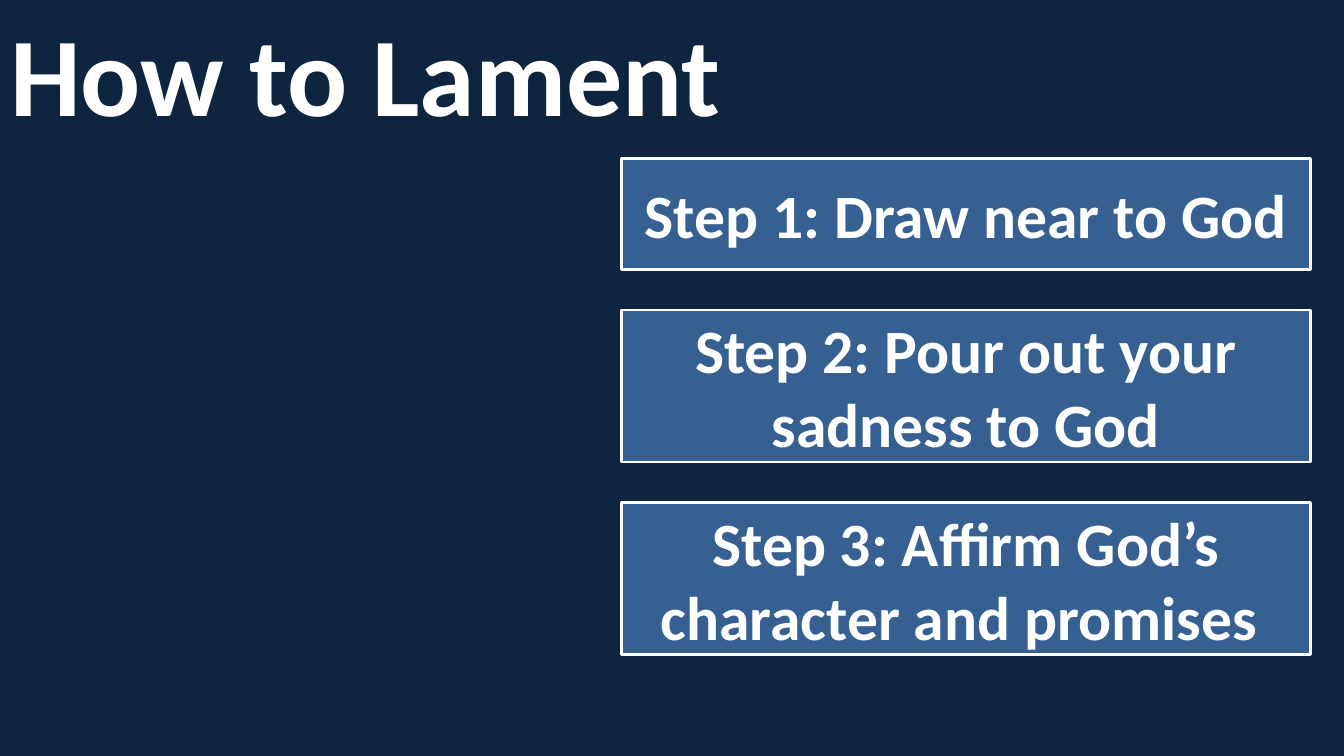
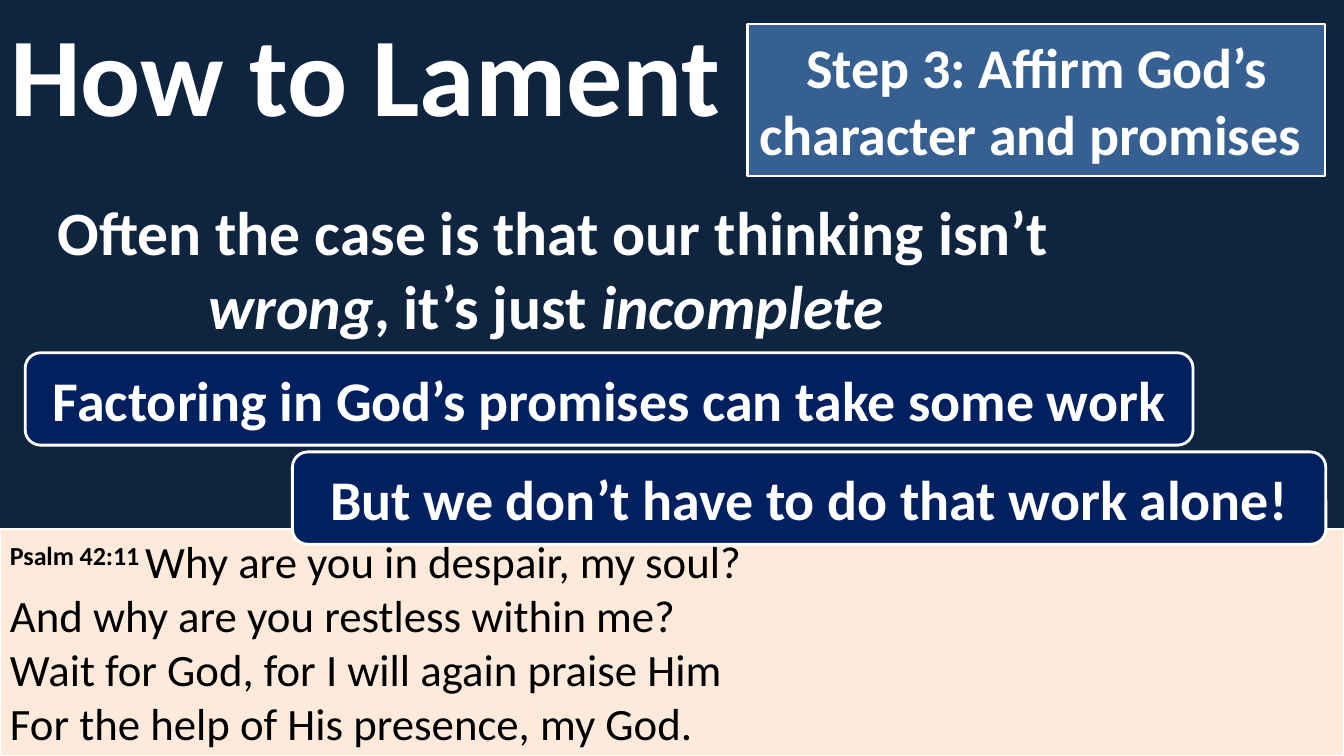
"""Build two slides on how to lament."""
from dataclasses import dataclass

from pptx import Presentation
from pptx.dml.color import RGBColor as Rgb
from pptx.enum.shapes import MSO_SHAPE as Form
from pptx.enum.text import MSO_ANCHOR as Anchor, MSO_AUTO_SIZE as Fit, PP_ALIGN as Align
from pptx.util import Inches, Pt


@dataclass(frozen=True)
class Theme:
    """Colours, type sizes and font of the deck."""
    font: str = "Calibri"
    night: str = "0F243E"
    steel: str = "376092"
    navy: str = "002060"
    cream: str = "FDEADA"
    white: str = "FFFFFF"
    black: str = "000000"
    head: int = 80
    large: int = 44
    mid: int = 40
    verse: int = 32


class Deck:
    """Hold the theme and the current slide, on a grid of 160 by 90."""

    def __init__(self, theme):
        """Open a wide deck with a dark master."""
        self.theme = theme
        self.prs = Presentation()
        self.prs.slide_width, self.prs.slide_height = Inches(13.33), Inches(7.5)
        fill = self.prs.slide_master.background.fill
        fill.solid()
        fill.fore_color.rgb = Rgb.from_string(theme.night)

    def area(self, col, row, wide, high):
        """Turn grid cells into lengths."""
        unit = self.prs.slide_height / 90
        return [round(n * unit) for n in (col, row, wide, high)]

    def label(self, shape, runs, size, ink=None, align=Align.CENTER, anchor=Anchor.MIDDLE):
        """Fill a shape with runs given as pairs of text and marks: b, i or s."""
        frame = shape.text_frame
        frame.word_wrap = True
        frame.auto_size = Fit.NONE
        frame.vertical_anchor = anchor
        para = frame.paragraphs[0]
        para.alignment = align
        for text, marks in runs:
            for num, line in enumerate(text.split("\n")):
                if num:
                    para.add_line_break()
                run = para.add_run()
                run.text = line
                font = run.font
                font.name, font.size = self.theme.font, Pt(size)
                font.bold, font.italic = "b" in marks, "i" in marks
                font.color.rgb = Rgb.from_string(ink or self.theme.white)
                if "s" in marks:
                    run._r.get_or_add_rPr().set("baseline", "30000")

    def page(self, title):
        """Add a slide with its title."""
        self.slide = self.prs.slides.add_slide(self.prs.slide_layouts[5])
        shape = self.slide.shapes.title
        shape.left, shape.top, shape.width, shape.height = self.area(0, 1, 92, 15)
        self.label(shape, [(title, "b")], self.theme.head, align=Align.LEFT)

    def note(self, cells, runs, size):
        """Add plain text."""
        self.label(self.slide.shapes.add_textbox(*self.area(*cells)), runs, size)

    def box(self, cells, fill, runs, size, form=Form.RECTANGLE, edge=2, **style):
        """Add a filled box with a white edge."""
        shape = self.slide.shapes.add_shape(form, *self.area(*cells))
        shape.shadow.inherit = False
        shape.fill.solid()
        shape.fill.fore_color.rgb = Rgb.from_string(fill)
        shape.line.color.rgb = Rgb.from_string(self.theme.white)
        shape.line.width = Pt(edge)
        self.label(shape, runs, size, **style)


def main():
    """Draw both slides and save them."""
    theme = Theme()
    deck = Deck(theme)
    title = "How to Lament"
    steps = [
        ("Step 1: Draw near to God", 13.2),
        ("Step 2: Pour out your sadness to God", 18.1),
        ("Step 3: Affirm God’s character and promises ", 18.1),
    ]

    deck.page(title)
    row, gap = 18.85, 4.85
    for text, high in steps:
        deck.box((74, row, 82, high), theme.steel, [(text, "b")], theme.large)
        row += high + gap

    deck.page(title)
    psalm = [
        ("Psalm 42:11 ", "bs"),
        ("Why are you in despair, my soul?\n"
         "And why are you restless within me?\n"
         "Wait for God, for I will again praise Him\n"
         "For the help of His presence, my God.", ""),
    ]
    deck.box((0, 63, 160, 27), theme.cream, psalm, theme.verse, edge=1.5,
             ink=theme.black, align=Align.LEFT, anchor=Anchor.TOP)
    deck.note((0.4, 24.4, 131, 15), [
        ("Often the case is that our thinking isn’t ", "b"),
        ("wrong", "bi"),
        (", it’s just ", "b"),
        ("incomplete ", "bi"),
    ], theme.large)
    text, high = steps[-1]
    deck.box((89, 2.85, 68.7, high), theme.steel, [(text, "b")], theme.mid)
    for cells, text in [
        ((3, 42, 139, 11), "Factoring in God’s promises can take some work"),
        ((34.8, 53.8, 123, 11), "But we don’t have to do that work alone!"),
    ]:
        deck.box(cells, theme.navy, [(text, "b")], theme.mid, Form.ROUNDED_RECTANGLE)

    deck.prs.save("out.pptx")


if __name__ == "__main__":
    main()
